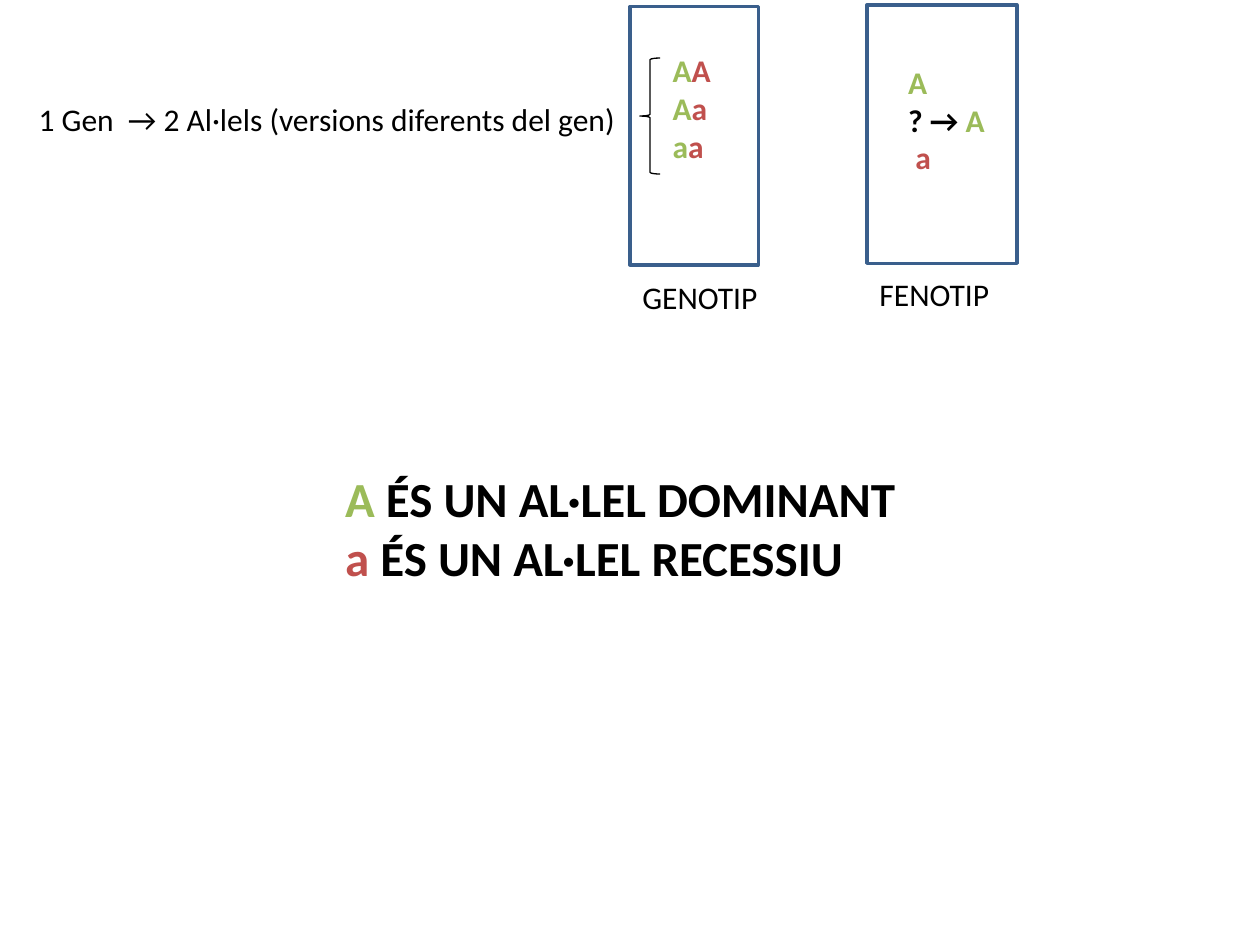
from dataclasses import dataclass

import pptx
import pptx.dml.color
import pptx.enum.shapes
import pptx.util
from pptx.util import Cm

COLORS = {
    "black": "000000",
    "dominant": "9BBB59",
    "recessive": "C0504D",
    "frame": "3A5F8C",
}


@dataclass(frozen=True)
class Box:
    left: float
    top: float
    width: float
    height: float

    def lengths(self) -> list:
        return [Cm(value) for value in (self.left, self.top, self.width, self.height)]


@dataclass(frozen=True)
class Label:
    box: Box
    lines: tuple
    size: int = 18
    bold: bool = False


@dataclass(frozen=True)
class Outline:
    box: Box
    kind: pptx.enum.shapes.MSO_SHAPE
    color: str
    weight: float


TEXT_WIDTH = 15.19
GENOTYPE_LEFT = 12.7
PHENOTYPE_LEFT = 17.48

LABELS = (
    Label(
        Box(0.53, 1.9, TEXT_WIDTH, 1.02),
        ((("1 Gen  → 2 Al·lels (versions diferents del gen)", "black"),),),
    ),
    Label(
        Box(13.31, 0.91, TEXT_WIDTH, 2.57),
        tuple(
            ((first, "dominant"), (second, "recessive"))
            for first, second in ("AA", "Aa", "aa")
        ),
        bold=True,
    ),
    Label(
        Box(18.06, 1.14, TEXT_WIDTH, 3.33),
        (
            (("A", "dominant"),),
            (("? → ", "black"), ("A", "dominant")),
            ((" a", "recessive"),),
        ),
        bold=True,
    ),
    Label(Box(GENOTYPE_LEFT, 5.49, 3.61, 1.02), ((("GENOTIP", "black"),),)),
    Label(Box(PHENOTYPE_LEFT, 5.41, 3.61, 1.02), ((("FENOTIP", "black"),),)),
    Label(
        Box(6.71, 9.32, TEXT_WIDTH, 3.43),
        (
            (("A ", "dominant"), ("ÉS UN AL·LEL DOMINANT", "black")),
            (("a ", "recessive"), ("ÉS UN AL·LEL RECESSIU", "black")),
        ),
        size=28,
        bold=True,
    ),
)

SHAPES = pptx.enum.shapes.MSO_SHAPE
OUTLINES = (
    Outline(Box(12.9, 1.17, 0.41, 2.34), SHAPES.LEFT_BRACE, "black", 0.75),
    Outline(Box(GENOTYPE_LEFT, 0.13, 2.59, 5.21), SHAPES.RECTANGLE, "frame", 2),
    Outline(Box(PHENOTYPE_LEFT, 0.1, 3.02, 5.21), SHAPES.RECTANGLE, "frame", 2),
)


def color_of(name: str) -> pptx.dml.color.RGBColor:
    return pptx.dml.color.RGBColor.from_string(COLORS[name])


def draw_label(slide: pptx.slide.Slide, label: Label) -> None:
    text_frame = slide.shapes.add_textbox(*label.box.lengths()).text_frame
    text_frame.word_wrap = True
    font_format = {
        "name": "Calibri",
        "size": pptx.util.Pt(label.size),
        "bold": label.bold,
    }
    for index, line in enumerate(label.lines):
        paragraph = text_frame.add_paragraph() if index else text_frame.paragraphs[0]
        for text, color in line:
            run = paragraph.add_run()
            run.text = text
            for attribute, value in font_format.items():
                setattr(run.font, attribute, value)
            run.font.color.rgb = color_of(color)


def draw_outline(slide: pptx.slide.Slide, outline: Outline) -> None:
    shape = slide.shapes.add_shape(outline.kind, *outline.box.lengths())
    shape.shadow.inherit = False
    shape.fill.background()
    shape.line.color.rgb = color_of(outline.color)
    shape.line.width = pptx.util.Pt(outline.weight)


def main() -> None:
    presentation = pptx.Presentation()
    presentation.slide_width = Cm(25.4)
    presentation.slide_height = Cm(19.05)
    slide = presentation.slides.add_slide(presentation.slide_layouts[6])
    for label in LABELS:
        draw_label(slide, label)
    for outline in OUTLINES:
        draw_outline(slide, outline)
    presentation.save("out.pptx")


if __name__ == "__main__":
    main()
